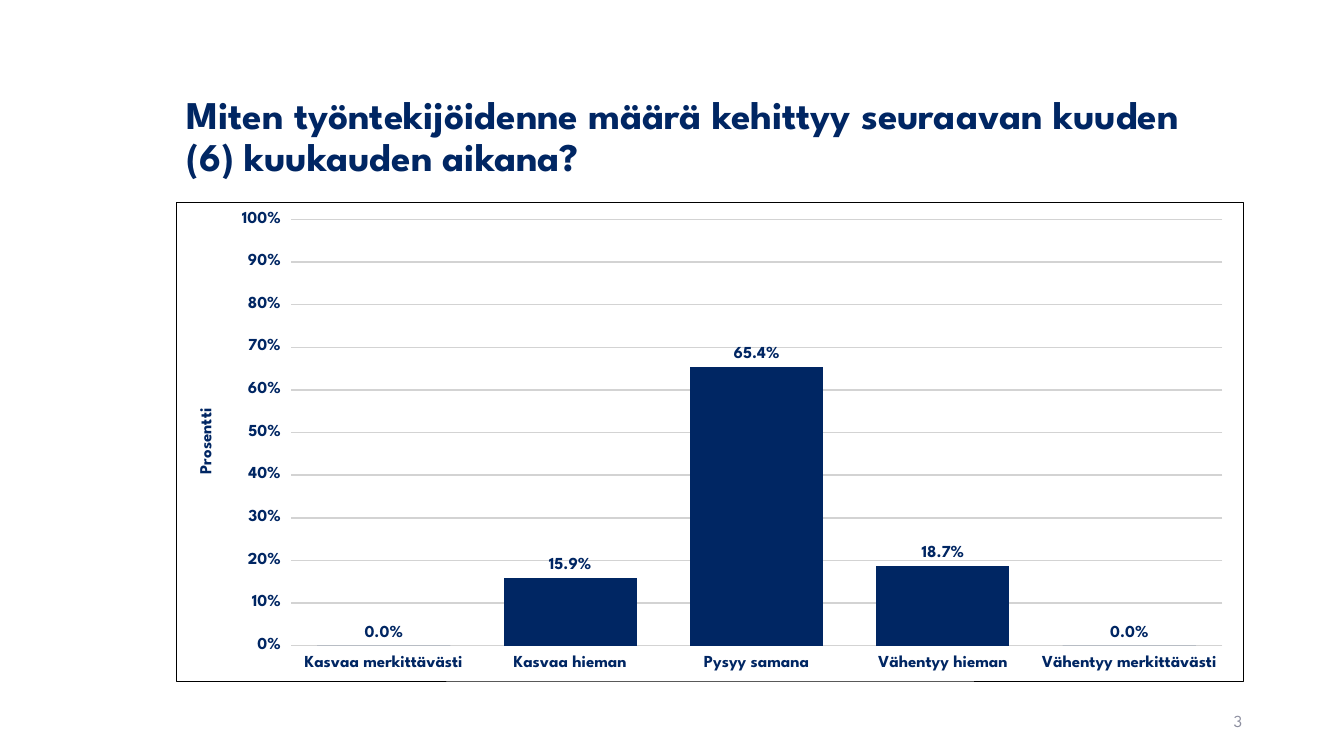
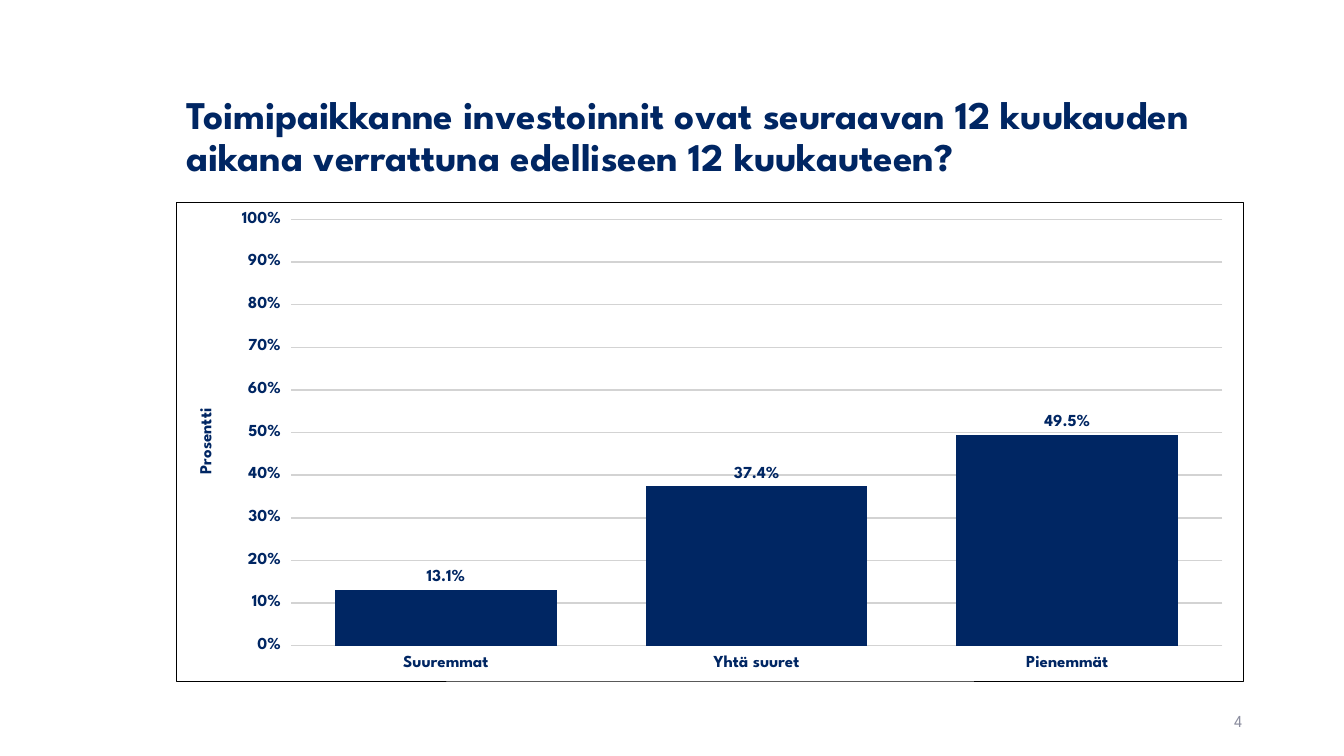
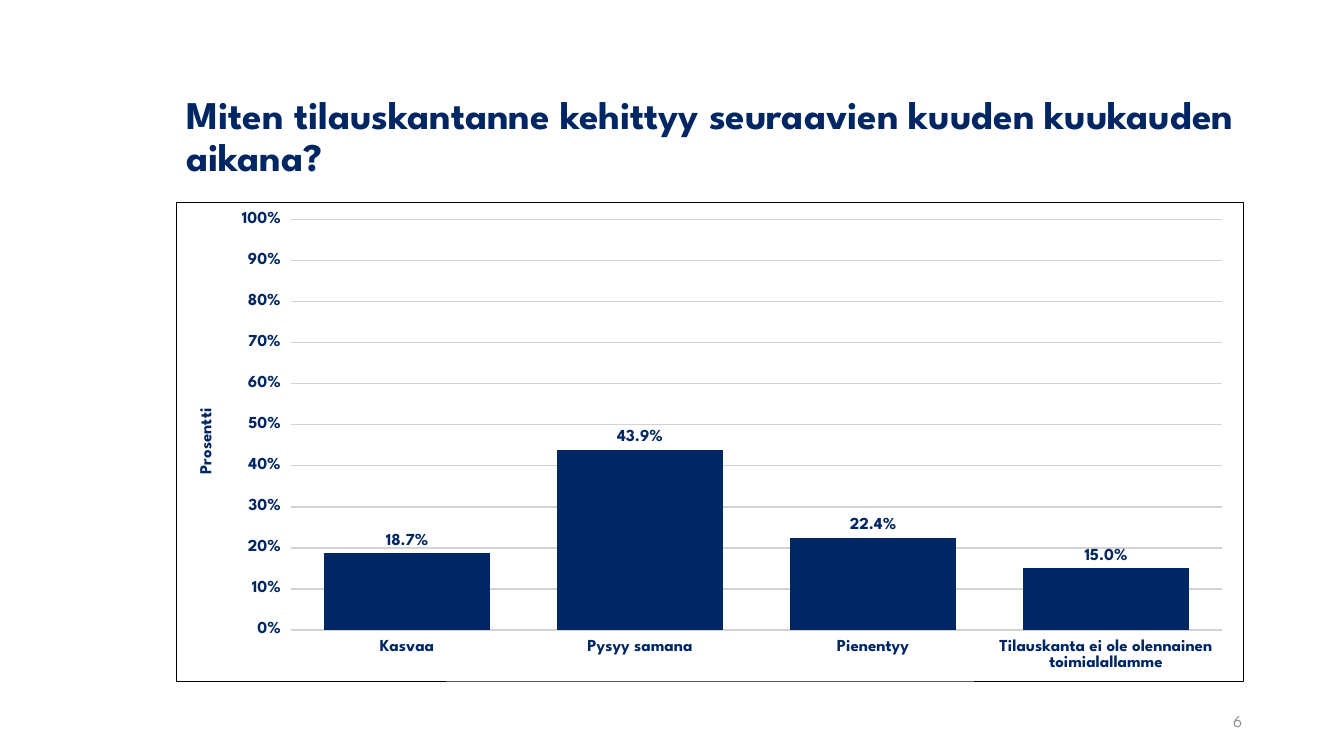
from dataclasses import dataclass

from lxml import etree
from pptx import Presentation
from pptx.chart.data import CategoryChartData
from pptx.dml.color import RGBColor
from pptx.enum.chart import XL_CHART_TYPE, XL_LABEL_POSITION, XL_TICK_MARK
from pptx.enum.text import MSO_ANCHOR, PP_ALIGN
from pptx.util import Inches, Pt

COLUMNS = XL_CHART_TYPE.COLUMN_CLUSTERED
ABOVE = XL_LABEL_POSITION.OUTSIDE_END
OUTSIDE = XL_TICK_MARK.OUTSIDE
MIDDLE = MSO_ANCHOR.MIDDLE
LEFT, RIGHT = PP_ALIGN.LEFT, PP_ALIGN.RIGHT


@dataclass(frozen=True)
class Theme:
    face: str = "League Spartan"
    navy: str = "002663"
    gray: str = "8C8E9F"
    grid: str = "D3D3D3"
    white: str = "FFFFFF"
    black: str = "000000"
    head: int = 28
    small: int = 12


THEME = Theme()
WIDE, HIGH = 13.33, 7.5

# Left, top, width and height in inches; title and chart share one column
SIDE, SPAN = 1.75, 10.59
TITLE = (SIDE, 0.64, SPAN, 1.45)
CHART = (SIDE, 2, SPAN, 4.76)
NUMBER = (9.42, 6.95, 3, 0.4)

# Slide number, question, and share of answers
SLIDES = [
    (3, "Miten työntekijöidenne määrä kehittyy seuraavan kuuden (6) kuukauden aikana?",
     {"Kasvaa merkittävästi": 0, "Kasvaa hieman": 0.159, "Pysyy samana": 0.654,
      "Vähentyy hieman": 0.187, "Vähentyy merkittävästi": 0}),
    (4, "Toimipaikkanne investoinnit ovat seuraavan 12 kuukauden aikana "
        "verrattuna edelliseen 12 kuukauteen?",
     {"Suuremmat": 0.131, "Yhtä suuret": 0.374, "Pienemmät": 0.495}),
    (6, "Miten tilauskantanne kehittyy seuraavien kuuden kuukauden aikana?",
     {"Kasvaa": 0.187, "Pysyy samana": 0.439, "Pienentyy": 0.224,
      "Tilauskanta ei ole olennainen toimialallamme": 0.15}),
]


def place(area):
    return [Inches(part) for part in area]


def style(font, size, color, bold):
    font.name = THEME.face
    font.size = Pt(size)
    font.bold = bold
    font.color.rgb = RGBColor.from_string(color)


def add_text(slide, area, text, size, color, bold=False, align=LEFT, pitch=1.0):
    frame = slide.shapes.add_textbox(*place(area)).text_frame
    frame.word_wrap = True
    frame.vertical_anchor = MIDDLE
    frame.text = text
    para = frame.paragraphs[0]
    para.alignment = align
    para.line_spacing = pitch
    style(para.runs[0].font, size, color, bold)


def box_xml(fill, line=None):
    """Chart shape properties: solid fill and an optional thin border."""
    solid = '<a:solidFill><a:srgbClr val="{}"/></a:solidFill>'.format
    edge = f'<a:ln w="{Pt(0.5)}">{solid(line)}</a:ln>' if line else "<a:ln><a:noFill/></a:ln>"
    return etree.fromstring(
        '<c:spPr xmlns:c="http://schemas.openxmlformats.org/drawingml/2006/chart" '
        'xmlns:a="http://schemas.openxmlformats.org/drawingml/2006/main">'
        f"{solid(fill)}{edge}</c:spPr>")


def style_axes(chart):
    for axis in (chart.category_axis, chart.value_axis):
        axis.major_tick_mark = OUTSIDE
        axis.format.line.fill.background()
    chart.category_axis.has_major_gridlines = False

    scale = chart.value_axis
    scale.minimum_scale, scale.maximum_scale = 0, 1
    scale.major_unit = 0.1
    scale.tick_labels.number_format = "0%"
    scale.tick_labels.number_format_is_linked = False
    grid = scale.major_gridlines.format.line
    grid.width = Pt(1)
    grid.color.rgb = RGBColor.from_string(THEME.grid)

    frame = scale.axis_title.text_frame
    frame.text = "Prosentti"
    style(frame.paragraphs[0].runs[0].font, THEME.small, THEME.navy, True)


def style_bars(plot):
    plot.gap_width = 40
    plot.overlap = -2
    plot.vary_by_categories = False
    fill = plot.series[0].format.fill
    fill.solid()
    fill.fore_color.rgb = RGBColor.from_string(THEME.navy)

    plot.has_data_labels = True
    labels = plot.data_labels
    labels.show_value = True
    labels.position = ABOVE
    labels.number_format = "0.0%"
    labels.number_format_is_linked = False
    style(labels.font, THEME.small, THEME.navy, True)


def add_bars(slide, shares):
    data = CategoryChartData()
    data.categories = list(shares)
    data.add_series("Series 1", list(shares.values()))
    chart = slide.shapes.add_chart(COLUMNS, *place(CHART), data).chart
    chart.has_title = False
    chart.has_legend = False
    style(chart.font, THEME.small, THEME.navy, True)
    style_axes(chart)
    style_bars(chart.plots[0])

    # Plot background and outer frame
    root = chart.element.chart
    root.plotArea.append(box_xml(THEME.white))
    root.addnext(box_xml(THEME.white, THEME.black))


def main():
    deck = Presentation()
    deck.slide_width, deck.slide_height = Inches(WIDE), Inches(HIGH)
    blank = deck.slide_layouts[6]
    for number, title, shares in SLIDES:
        slide = deck.slides.add_slide(blank)
        add_text(slide, TITLE, title, THEME.head, THEME.navy, bold=True, pitch=0.9)
        add_text(slide, NUMBER, str(number), THEME.small, THEME.gray, align=RIGHT)
        add_bars(slide, shares)
    deck.save("out.pptx")


if __name__ == "__main__":
    main()
